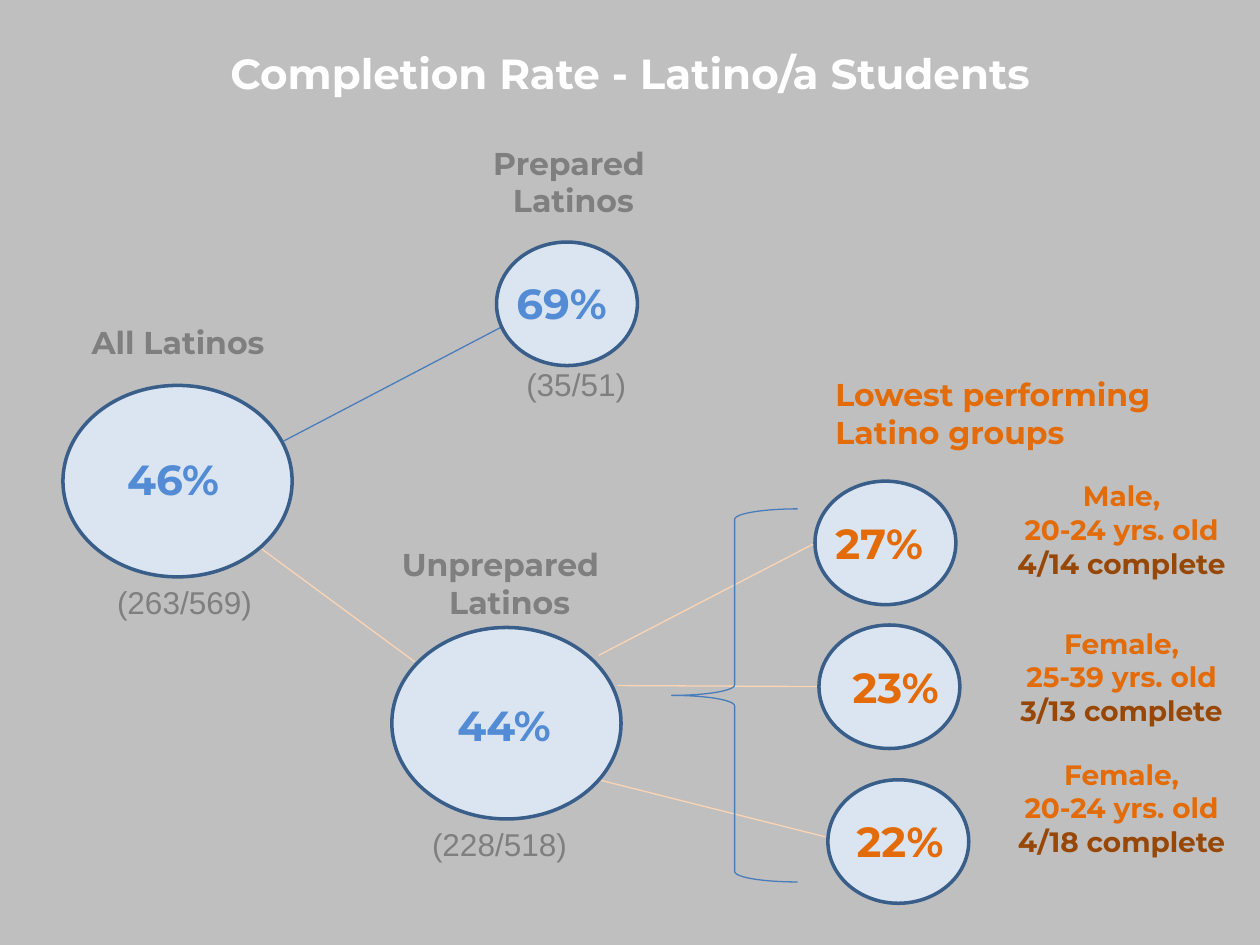
from pptx import Presentation
from pptx import util as u
from pptx.dml.color import RGBColor
from pptx.enum import shapes, text
from pptx.oxml.ns import qn
from lxml import etree

GREY_BG = RGBColor(0xBF, 0xBF, 0xBF)
WHITE = RGBColor(0xFF, 0xFF, 0xFF)
GREY = RGBColor(0x7F, 0x7F, 0x7F)
PALE = RGBColor(0xDA, 0xE5, 0xF1)
NAVY = RGBColor(0x39, 0x5E, 0x8A)
BLUE = RGBColor(0x53, 0x8C, 0xD5)
LINE_BLUE = RGBColor(0x4A, 0x7D, 0xBB)
PEACH = RGBColor(0xFB, 0xD4, 0xB4)
ORANGE = RGBColor(0xE3, 0x6C, 0x09)
BROWN = RGBColor(0x97, 0x48, 0x06)
L, C = text.PP_ALIGN.LEFT, text.PP_ALIGN.CENTER

prs = Presentation()
prs.slide_width, prs.slide_height = u.Cm(25.4), u.Cm(19.05)
s = prs.slides.add_slide(prs.slide_layouts[6])
s.background.fill.solid()
s.background.fill.fore_color.rgb = GREY_BG


def add_text(box, lines, size, font="Montserrat", bold=True):
    """Add a text box; each line is (wording, colour, alignment)."""
    tf = s.shapes.add_textbox(*[u.Cm(v) for v in box]).text_frame
    tf.word_wrap = True
    for i, (wording, colour, align) in enumerate(lines):
        p = tf.paragraphs[0] if i == 0 else tf.add_paragraph()
        p.alignment = align
        r = p.add_run()
        r.text = wording
        r.font.name, r.font.size, r.font.bold = font, u.Pt(size), bold
        r.font.color.rgb = colour


# Title
add_text((0, 0.84, 25.4, 1.27),
         [("Completion Rate - Latino/a Students", WHITE, C)], 24)

# Connecting lines
for x1, y1, x2, y2, colour in [
    (5.72, 8.89, 10.19, 6.55, LINE_BLUE),
    (5.28, 11.07, 8.36, 13.34, PEACH),
    (12.07, 13.21, 16.43, 10.95, PEACH),
    (12.45, 13.82, 16.51, 13.84, PEACH),
    (12.07, 15.72, 16.64, 16.87, PEACH),
]:
    ln = s.shapes.add_connector(shapes.MSO_CONNECTOR.STRAIGHT,
                                u.Cm(x1), u.Cm(y1), u.Cm(x2), u.Cm(y2))
    ln.line.color.rgb = colour
    ln.line.width = u.Pt(0.75)
    etree.SubElement(ln._element.spPr, qn("a:effectLst"))

# Brace in front of the lowest performing groups
sp = s.shapes.add_shape(shapes.MSO_SHAPE.LEFT_BRACE,
                        u.Cm(13.54), u.Cm(10.26), u.Cm(2.54), u.Cm(7.52))
sp.adjustments[0], sp.adjustments[1] = 0.083, 0.5
sp.shadow.inherit = False
sp.fill.background()
sp.line.color.rgb = LINE_BLUE
sp.line.width = u.Pt(0.75)

# Circles with their rates: circle position, size, text box, rate
BIG, SMALL = (4.62, 3.86), (2.84, 2.49)
for x, y, (w, h), tx, ty, tw, rate, colour, align in [
    (1.27, 7.77, BIG, 1.7, 9.02, 3.58, "46%", BLUE, C),
    (10.01, 4.88, SMALL, 10.16, 5.46, 3.4, "69%", BLUE, L),
    (7.9, 12.65, BIG, 8.97, 13.97, 3.1, "44%", BLUE, L),
    (16.43, 9.7, SMALL, 16.59, 10.31, 3.1, "27%", ORANGE, L),
    (16.51, 12.6, SMALL, 16.94, 13.21, 3.1, "23%", ORANGE, L),
    (16.69, 15.72, SMALL, 17.02, 16.31, 3.1, "22%", ORANGE, L),
]:
    sp = s.shapes.add_shape(shapes.MSO_SHAPE.OVAL,
                            u.Cm(x), u.Cm(y), u.Cm(w), u.Cm(h))
    sp.shadow.inherit = False
    sp.fill.solid()
    sp.fill.fore_color.rgb = PALE
    sp.line.color.rgb = NAVY
    sp.line.width = u.Pt(2)
    add_text((tx, ty, tw, 1.27), [(rate, colour, align)], 24)

# Group headings
add_text((1.47, 6.38, 4.24, 1.02), [("All Latinos", GREY, C)], 18)
add_text((9.58, 2.77, 3.96, 1.8),
         [("Prepared ", GREY, C), ("Latinos", GREY, C)], 18)
add_text((7.85, 10.87, 4.85, 1.8),
         [("Unprepared", GREY, L), ("Latinos", GREY, C)], 18)
add_text((16.59, 7.44, 8.5, 1.8),
         [("Lowest performing", ORANGE, L), ("Latino groups", ORANGE, L)], 18)

# Student counts
for x, y, w, count in [(2.11, 11.63, 3.61, "(263/569)"),
                       (10.36, 7.24, 2.54, "(35/51)"),
                       (8.46, 16.51, 3.25, "(228/518)")]:
    add_text((x, y, w, 1.02), [(count, GREY, L)], 18, "Arial", False)

# Descriptions of the lowest performing groups
for y, gender, ages, done in [(9.53, "Male,", "20-24", "4/14"),
                              (12.5, "Female,", "25-39", "3/13"),
                              (15.14, "Female,", "20-24", "4/18")]:
    add_text((19.69, y, 5.84, 2.31),
             [(gender, ORANGE, C), (f"{ages} yrs. old", ORANGE, C),
              (f"{done} complete", BROWN, C)], 16)

prs.save("out.pptx")
